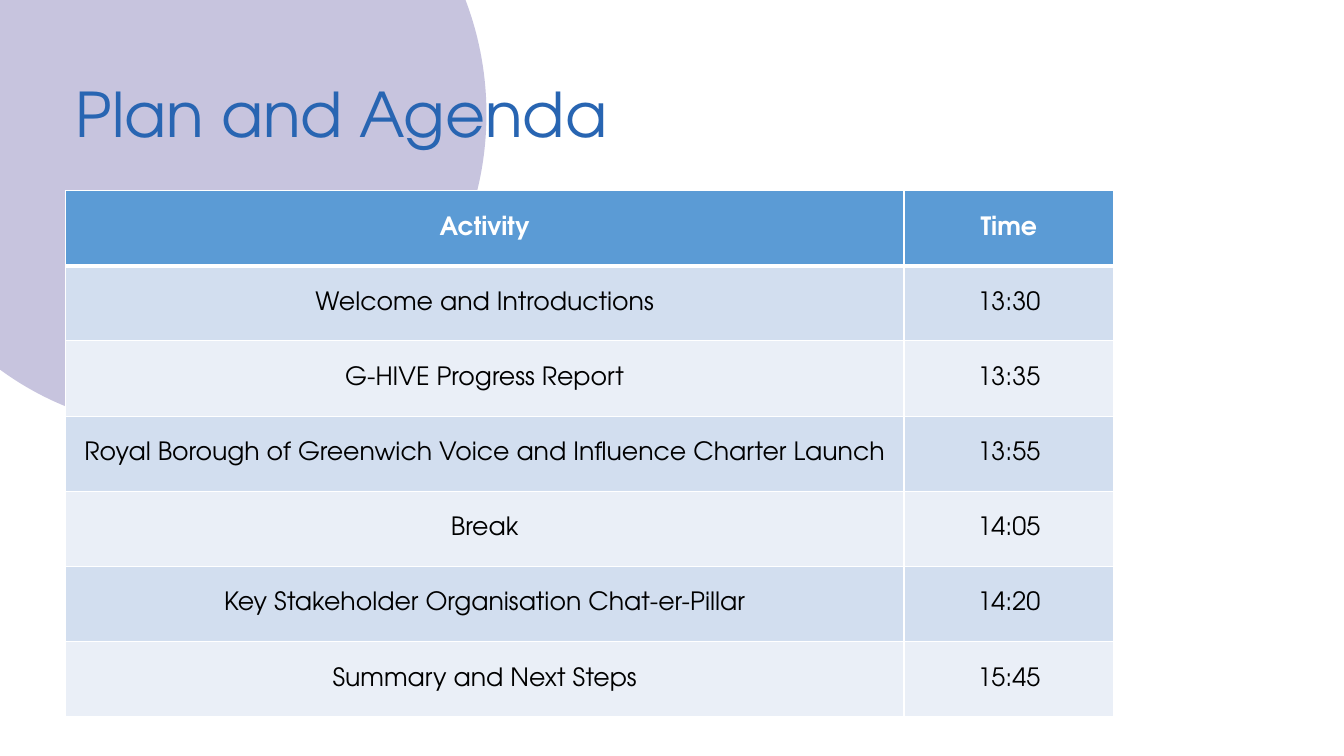
from lxml import etree
from pptx import Presentation
from pptx.dml.color import RGBColor
from pptx.enum import shapes, text
from pptx.oxml.ns import qn
from pptx.util import Cm, Pt

FONT = "TeX Gyre Adventor"
WHITE = "FFFFFF"
HEAD = "5B9BD5"
BANDS = ("D2DEEF", "EAEFF7")
AGENDA = [
    ("Activity", "Time"),
    ("Welcome and Introductions", "13:30"),
    ("G-HIVE Progress Report", "13:35"),
    ("Royal Borough of Greenwich Voice and Influence Charter Launch", "13:55"),
    ("Break", "14:05"),
    ("Key Stakeholder Organisation Chat-er-Pillar", "14:20"),
    ("Summary and Next Steps", "15:45"),
]


def paint(fill, tint):
    """Give a fill one solid colour."""
    fill.solid()
    fill.fore_color.rgb = RGBColor.from_string(tint)


def write(frame, words, size=18, tint="000000", bold=False, align=None, space=None):
    """Put one formatted paragraph in a text frame."""
    frame.text = words
    para = frame.paragraphs[0]
    para.alignment = align
    para.line_spacing = space
    font = para.runs[0].font
    font.name, font.size, font.bold = FONT, Pt(size), bold
    font.color.rgb = RGBColor.from_string(tint)


def place(shape, left, top, width, height):
    """Set the place and size of a shape in centimetres."""
    shape.left, shape.top = Cm(left), Cm(top)
    shape.width, shape.height = Cm(width), Cm(height)


def add_disc(slide):
    """Draw the pale disc behind everything else."""
    disc = slide.shapes.add_shape(
        shapes.MSO_SHAPE.OVAL, Cm(-3.23), Cm(-5.05), Cm(15.49), Cm(15.85))
    disc.shadow.inherit = False
    disc.line.fill.background()
    paint(disc.fill, "483C95")
    tint = disc.fill._xPr.find(".//" + qn("a:srgbClr"))
    etree.SubElement(tint, qn("a:alpha"), val="30000")
    slide.shapes._spTree.insert(2, disc._element)


def add_title(slide, words):
    """Fill and move the title placeholder."""
    title = slide.shapes.title
    place(title, 1.65, 1.12, 26.42, 3.68)
    title.text_frame.vertical_anchor = text.MSO_ANCHOR.MIDDLE
    write(title.text_frame, words, size=44, tint="2865B2",
          align=text.PP_ALIGN.LEFT, space=0.9)


def edge(cell, side, width):
    """Draw one white cell border."""
    line = etree.SubElement(cell._tc.get_or_add_tcPr(), qn("a:ln" + side),
                            w=str(Pt(width)))
    fill = etree.SubElement(line, qn("a:solidFill"))
    etree.SubElement(fill, qn("a:srgbClr"), val=WHITE)


def add_table(slide, rows):
    """Add the banded agenda table."""
    table = slide.shapes.add_table(
        len(rows), 2, Cm(1.65), Cm(4.8), Cm(26.42), Cm(13.27)).table
    for col, width in zip(table.columns, (21.13, 5.29)):
        col.width = Cm(width)
    for r, row in enumerate(rows):
        head = r == 0
        for c, words in enumerate(row):
            cell = table.cell(r, c)
            cell.vertical_anchor = text.MSO_ANCHOR.MIDDLE
            write(cell.text_frame, words, tint=WHITE if head else "000000",
                  bold=head, align=text.PP_ALIGN.CENTER)
            for side in "LRTB":
                thick = (r, side) in ((0, "B"), (1, "T"))
                edge(cell, side, 3 if thick else 1)
            paint(cell.fill, HEAD if head else BANDS[(r - 1) % 2])


def main():
    """Build the agenda slide."""
    deck = Presentation()
    deck.slide_width, deck.slide_height = Cm(33.87), Cm(19.05)
    slide = deck.slides.add_slide(deck.slide_layouts[5])
    add_disc(slide)
    add_title(slide, "Plan and Agenda")
    add_table(slide, AGENDA)
    deck.save("out.pptx")


if __name__ == "__main__":
    main()
